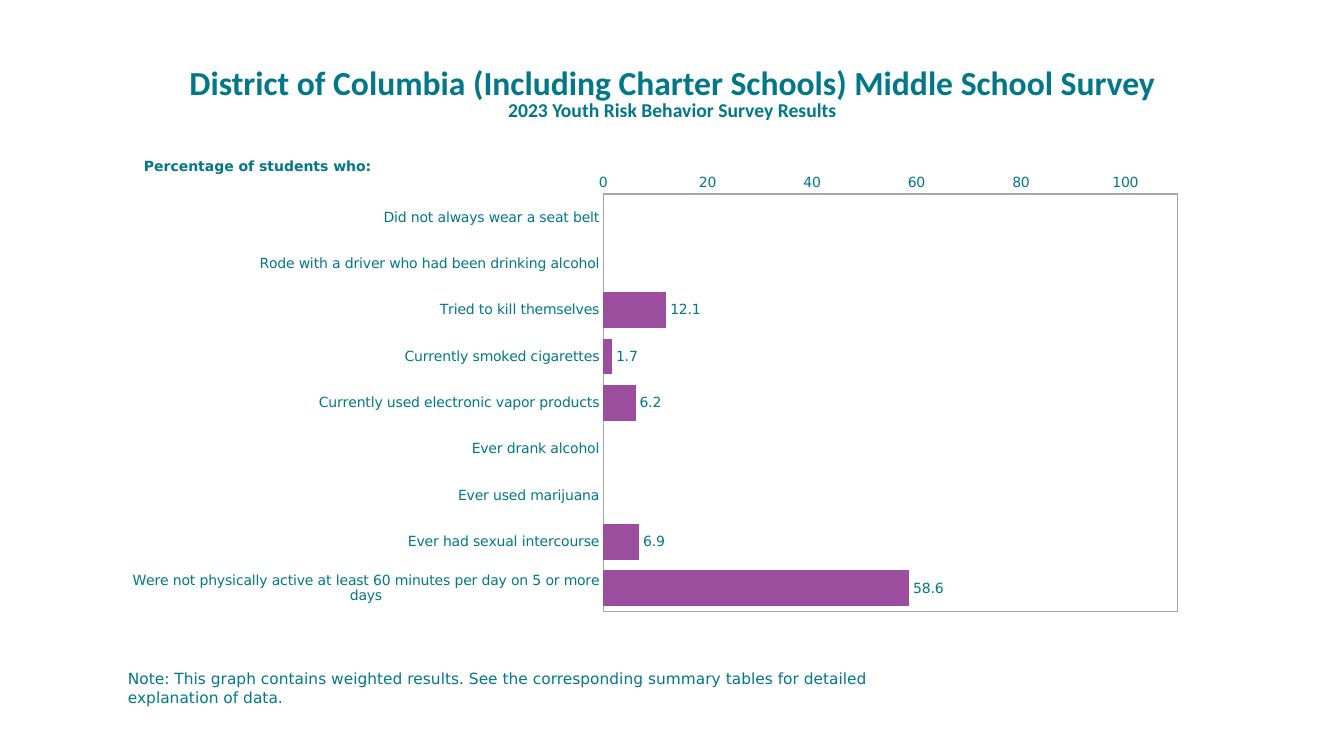
from lxml import etree
from pptx import Presentation
from pptx.chart.data import CategoryChartData
from pptx.dml.color import RGBColor
from pptx.enum.chart import (XL_AXIS_CROSSES, XL_CHART_TYPE, XL_LABEL_POSITION,
                             XL_TICK_LABEL_POSITION, XL_TICK_MARK)
from pptx.enum.text import MSO_ANCHOR, PP_ALIGN
from pptx.oxml import parse_xml
from pptx.oxml.ns import nsdecls, qn
from pptx.util import Inches, Pt

CENTER, LEFT = PP_ALIGN.CENTER, PP_ALIGN.LEFT
TOP = MSO_ANCHOR.TOP
BAR_CLUSTERED = XL_CHART_TYPE.BAR_CLUSTERED
OUTSIDE_END = XL_LABEL_POSITION.OUTSIDE_END
MAXIMUM = XL_AXIS_CROSSES.MAXIMUM
NEXT_TO_AXIS = XL_TICK_LABEL_POSITION.NEXT_TO_AXIS
NO_TICKS = XL_TICK_MARK.NONE
TEAL, PURPLE, GRAY = "007889", "9B4E9E", "A6A6A6"
HEADING_FONT, BODY_FONT = "Calibri", "DejaVu Sans"


def color(value):
    return RGBColor.from_string(value)


def write(box, place, text, font_name, size, bold, align):
    box.left, box.top, box.width, box.height = [Inches(n) for n in place]
    frame = box.text_frame
    frame.word_wrap = True
    frame.vertical_anchor = TOP
    frame.text = text
    paragraph = frame.paragraphs[0]
    paragraph.alignment = align
    font = paragraph.runs[0].font
    font.name, font.size, font.bold = font_name, Pt(size), bold
    font.color.rgb = color(TEAL)


prs = Presentation()
prs.slide_width, prs.slide_height = Inches(13.33), Inches(7.5)
slide = prs.slides.add_slide(prs.slide_layouts[5])

# Title
write(slide.shapes.title, (1.67, 0.56, 10, 0.5),
      "District of Columbia (Including Charter Schools) Middle School Survey",
      HEADING_FONT, 24, True, CENTER)

# Survey results, None where no value was reported
results = [
    ("Did not always wear a seat belt", None),
    ("Rode with a driver who had been drinking alcohol", None),
    ("Tried to kill themselves", 12.1),
    ("Currently smoked cigarettes", 1.7),
    ("Currently used electronic vapor products", 6.2),
    ("Ever drank alcohol", None),
    ("Ever used marijuana", None),
    ("Ever had sexual intercourse", 6.9),
    ("Were not physically active at least 60 minutes per day on 5 or more days", 58.6),
]
behaviors, percentages = zip(*results)
survey_data = CategoryChartData()
survey_data.categories = behaviors
survey_data.add_series("Series 1", percentages)
chart = slide.shapes.add_chart(BAR_CLUSTERED, Inches(1), Inches(1.25),
                               Inches(11), Inches(5.55), survey_data).chart
chart.has_legend = False
chart.has_title = False
chart.font.name, chart.font.size = BODY_FONT, Pt(10)
chart.font.color.rgb = color(TEAL)

# Bars and their values
bars = chart.plots[0]
bars.gap_width, bars.overlap = 30, -82
bars.vary_by_categories = False
bars.series[0].format.fill.solid()
bars.series[0].format.fill.fore_color.rgb = color(PURPLE)
bars.has_data_labels = True
labels = bars.data_labels
labels.show_value = True
labels.number_format, labels.number_format_is_linked = "#,##0.0", False
labels.position = OUTSIDE_END

# Axes: first behavior on top, percentages at the bottom
behavior_axis, percent_axis = chart.category_axis, chart.value_axis
for axis in (behavior_axis, percent_axis):
    axis.has_major_gridlines = False
    axis.major_tick_mark = axis.minor_tick_mark = NO_TICKS
    axis.tick_label_position = NEXT_TO_AXIS
    axis.format.line.color.rgb = color(GRAY)
    axis.format.line.width = Pt(1)
behavior_axis.reverse_order = True
behavior_axis.crosses = MAXIMUM
percent_axis.minimum_scale, percent_axis.maximum_scale = 0, 110
percent_axis.major_unit = 20
percent_axis.tick_labels.number_format = "0"
percent_axis.tick_labels.number_format_is_linked = False

# Fixed plot area with a gray frame
plot_area = chart._chartSpace.chart.plotArea
for old_layout in plot_area.findall(qn("c:layout")):
    plot_area.remove(old_layout)
layout = parse_xml(f"<c:layout {nsdecls('c')}><c:manualLayout/></c:layout>")
for tag, value in [("layoutTarget", "inner"), ("xMode", "edge"), ("yMode", "edge"),
                   ("x", "0.453"), ("y", "0.122"), ("w", "0.518"), ("h", "0.746")]:
    etree.SubElement(layout[0], qn(f"c:{tag}")).set("val", value)
plot_area.insert(0, layout)
plot_area.append(parse_xml(
    f"<c:spPr {nsdecls('c', 'a')}><a:noFill/><a:ln w='12700'><a:solidFill>"
    f"<a:srgbClr val='{GRAY}'/></a:solidFill></a:ln></c:spPr>"))

# Subtitle, chart heading and note
captions = [
    ((1.67, 0.92, 10, 0.34), "2023 Youth Risk Behavior Survey Results",
     HEADING_FONT, 14, True, CENTER),
    ((1.33, 1.51, 3.47, 0.27), "Percentage of students who:",
     BODY_FONT, 10, True, LEFT),
    ((1.17, 6.59, 8.33, 0.29),
     "Note: This graph contains weighted results. See the corresponding summary "
     "tables for detailed explanation of data.", BODY_FONT, 11, False, LEFT),
]
for caption in captions:
    write(slide.shapes.add_textbox(0, 0, 0, 0), *caption)

prs.save("out.pptx")
